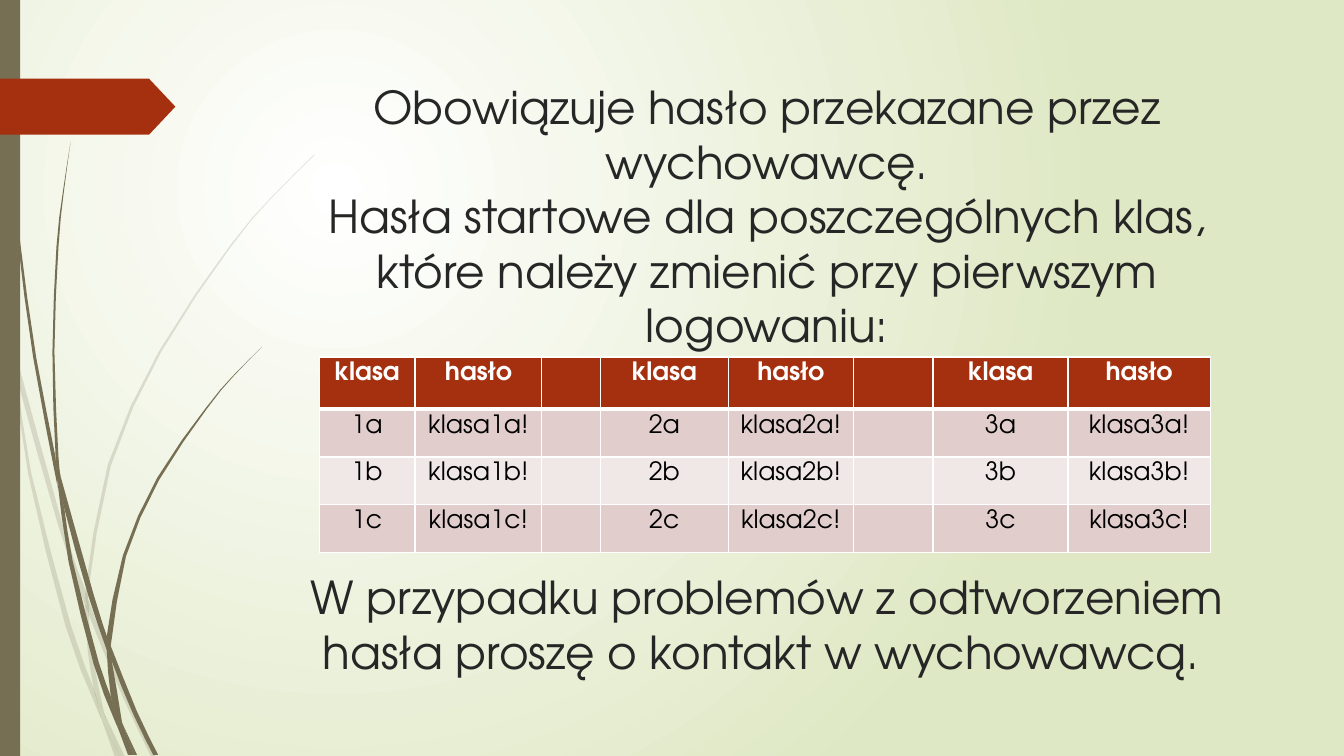
from lxml.etree import SubElement
from pptx import Presentation
from pptx.dml.color import RGBColor
from pptx.enum.shapes import MSO_SHAPE
from pptx.enum.text import MSO_ANCHOR, PP_ALIGN
from pptx.oxml.ns import qn
from pptx.util import Pt

FONT = "TeX Gyre Adventor"
WHITE = RGBColor(0xFF, 0xFF, 0xFF)
BLACK = RGBColor(0x00, 0x00, 0x00)
INK = RGBColor(0x26, 0x26, 0x26)
LIME = RGBColor(0xDF, 0xE8, 0xC4)
OLIVE = RGBColor(0x76, 0x6F, 0x54)
RUST = RGBColor(0xA5, 0x30, 0x10)
ROSE = RGBColor(0xE1, 0xCD, 0xCC)
BLUSH = RGBColor(0xF0, 0xE8, 0xE7)

GRID = 0.72
LINE_HEIGHT = 38.9
COLUMN_WIDTHS = [68.4, 90.7, 41.8, 91.4, 89.3, 56.9, 96.5, 101.5]
ROW_HEIGHTS = [37.4, 34, 34, 34]
GRADES = "123"
LETTERS = "abc"

PALE_BLADES = [
    ([(0, 299), (10, 344), (11, 350)], [(0, 282), (9, 322), (11, 350)]),
    ([(14, 345), (17, 376), (58, 522), (84, 599)], [(14, 345), (62, 520), (85, 586)]),
    ([(88, 596), (88, 610), (123, 694), (150, 751)], [(92, 607), (127, 692), (155, 751)]),
    ([(105, 711), (119, 751)], [(105, 711), (124, 751)]),
    ([(11, 350), (28, 470), (65, 621), (92, 693), (101, 714)],
     [(11, 350), (17, 376), (31, 469), (70, 619), (93, 683), (99, 707), (101, 714)]),
    ([(84, 599), (87, 646), (93, 683), (96, 692), (105, 711)],
     [(84, 599), (88, 608), (91, 646), (103, 706), (105, 711)]),
    ([(312, 153), (268, 197), (228, 244), (158, 348), (107, 461), (85, 584), (88, 596)],
     [(312, 154), (268, 198), (229, 245), (160, 349), (110, 462), (88, 584), (88, 596)]),
    ([(101, 714), (114, 751)], [(101, 714), (119, 751)]),
    ([(85, 586), (84, 599), (88, 608)], [(85, 586), (88, 596), (88, 610)]),
    ([(93, 683), (99, 707), (101, 714), (119, 751)], [(93, 683), (96, 692), (105, 711), (119, 751)]),
]
DARK_BLADES = [
    ([(3, 0), (7, 110), (17, 233), (33, 355), (56, 477), (57, 481)],
     [(4, 0), (8, 109), (19, 232), (36, 355), (55, 453), (57, 481)]),
    ([(60, 472), (64, 505), (88, 592), (106, 645)], [(60, 472), (93, 590), (106, 631)]),
    ([(110, 641), (111, 656), (132, 708), (152, 749)], [(110, 641), (136, 706), (157, 749)]),
    ([(57, 477), (68, 557), (93, 659), (111, 708), (117, 722)],
     [(57, 477), (64, 505), (72, 556), (98, 657), (110, 691), (117, 722)]),
    ([(70, 141), (62, 193), (56, 245), (52, 349), (55, 449), (60, 472)],
     [(70, 141), (63, 193), (58, 245), (54, 349), (58, 453), (60, 472)]),
    ([(122, 719), (133, 749)], [(122, 719), (136, 749)]),
    ([(55, 449), (57, 477), (64, 505)], [(55, 449), (60, 472), (64, 505)]),
    ([(260, 344), (231, 373), (204, 405), (156, 474), (122, 551), (106, 631), (110, 641)],
     [(260, 344), (231, 374), (205, 406), (158, 476), (125, 552), (111, 633), (110, 641)]),
    ([(117, 722), (127, 749)], [(117, 722), (131, 749)]),
    ([(106, 645), (110, 691), (122, 719)], [(106, 645), (111, 656), (121, 716), (122, 719)]),
    ([(106, 631), (106, 645), (111, 656)], [(106, 631), (110, 641), (111, 656)]),
    ([(110, 691), (117, 722), (130, 749)], [(110, 691), (122, 719), (133, 749)]),
]


def smooth(points, steps=2):
    """Return a Catmull-Rom curve through the points."""
    padded = [points[0], *points, points[-1]]
    curve = [points[0]]
    for a, b, c, d in zip(padded, padded[1:], padded[2:], padded[3:]):
        for step in range(1, steps + 1):
            t = step / steps
            curve.append(tuple(
                q + t * (r - p) / 2 + t * t * (2 * p - 5 * q + 4 * r - s) / 2
                + t ** 3 * (3 * q - p - 3 * r + s) / 2
                for p, q, r, s in zip(a, b, c, d)))
    return curve


def paint(shape, color, opacity=100):
    """Give the shape a plain fill with no outline or shadow."""
    shape.shadow.inherit = False
    shape.line.fill.background()
    shape.fill.solid()
    shape.fill.fore_color.rgb = color
    if opacity < 100:
        tint = shape.element.xpath("./p:spPr/a:solidFill/a:srgbClr")[0]
        SubElement(tint, qn("a:alpha"), val=str(opacity * 1000))


def add_blade(page, left_edge, right_edge, opacity):
    """Draw one piece of grass between its two edges."""
    outline = smooth(left_edge) + smooth(right_edge)[::-1]
    corners = [(Pt(x * GRID), Pt(y * GRID)) for x, y in outline]
    builder = page.shapes.build_freeform(*corners[0])
    builder.add_line_segments(corners[1:], close=True)
    paint(builder.convert_to_shape(), OLIVE, opacity)


def add_block(page, kind, left, top, width, height, color):
    """Add a plain preset shape."""
    block = page.shapes.add_shape(kind, Pt(left), Pt(top), Pt(width), Pt(height))
    paint(block, color)
    return block


def write(para, text, *, size, color, bold=False, before=0):
    """Fill a paragraph with one centred span."""
    para.alignment = PP_ALIGN.CENTER
    para.space_before = Pt(before)
    span = para.add_run()
    span.text = text
    span.font.name = FONT
    span.font.size = Pt(size)
    span.font.bold = bold
    span.font.color.rgb = color


def add_message(page):
    """Add the instructions, leaving room for the table."""
    box = page.shapes.add_textbox(Pt(197), Pt(53.3), Pt(702), Pt(435))
    frame = box.text_frame
    frame.word_wrap = True
    frame.vertical_anchor = MSO_ANCHOR.TOP
    messages = [
        ("Obowiązuje hasło przekazane przez wychowawcę.", 0),
        ("Hasła startowe dla poszczególnych klas, które należy zmienić przy pierwszym logowaniu:", 0),
        ("W przypadku problemów z odtworzeniem hasła proszę o kontakt w wychowawcą. ", 4 * LINE_HEIGHT),
    ]
    for index, (text, before) in enumerate(messages):
        para = frame.add_paragraph() if index else frame.paragraphs[0]
        write(para, text, size=32.4, color=INK, before=before)


def set_borders(cell, top, bottom):
    """Draw white cell borders, with the top and bottom widths given."""
    properties = cell._tc.get_or_add_tcPr()
    sides = [("a:lnL", 1), ("a:lnR", 1), ("a:lnT", top), ("a:lnB", bottom)]
    for index, (side, width) in enumerate(sides):
        line = SubElement(properties, qn(side), w=str(Pt(width)))
        SubElement(SubElement(line, qn("a:solidFill")), qn("a:srgbClr"), val=str(WHITE))
        properties.insert(index, line)


def join(pairs):
    """Lay pairs side by side with an empty cell between them."""
    return [text for pair in pairs for text in (*pair, "")][:-1]


def add_password_table(page):
    """Add the table of starting passwords."""
    rows = [join([("klasa", "hasło")] * len(GRADES))]
    rows += [join([(grade + letter, f"klasa{grade}{letter}!") for grade in GRADES]) for letter in LETTERS]
    table = page.shapes.add_table(len(rows), len(COLUMN_WIDTHS), Pt(228), Pt(255),
                                  Pt(sum(COLUMN_WIDTHS)), Pt(sum(ROW_HEIGHTS))).table
    for column, width in zip(table.columns, COLUMN_WIDTHS):
        column.width = Pt(width)
    for row, height in zip(table.rows, ROW_HEIGHTS):
        row.height = Pt(height)
    for r, texts in enumerate(rows):
        is_header = r == 0
        for c, text in enumerate(texts):
            cell = table.cell(r, c)
            cell.margin_top = cell.margin_bottom = Pt(3.6)
            cell.margin_left = cell.margin_right = Pt(5)
            cell.fill.solid()
            cell.fill.fore_color.rgb = RUST if is_header else (BLUSH, ROSE)[r % 2]
            set_borders(cell, 3 if r == 1 else 1, 3 if is_header else 1)
            if text:
                write(cell.text_frame.paragraphs[0], text, size=18,
                      color=WHITE if is_header else BLACK, bold=is_header)


def set_background(page):
    """Fill the page with a round glow from white to lime."""
    fill = page.background.fill
    fill.gradient()
    for stop, color in zip(fill.gradient_stops, (WHITE, LIME)):
        stop.color.rgb = color
    gradient = page.element.xpath(".//p:bg//a:gradFill")[0]
    for line in gradient.findall(qn("a:lin")):
        gradient.remove(line)
    glow = SubElement(gradient, qn("a:path"))
    glow.set("path", "circle")
    SubElement(glow, qn("a:fillToRect"), l="50000", t="50000", r="100000", b="100000")


def main():
    """Build the slide and save the deck."""
    deck = Presentation()
    deck.slide_width, deck.slide_height = Pt(960), Pt(540)
    page = deck.slides.add_slide(deck.slide_layouts[6])
    set_background(page)
    for blades, opacity in ((PALE_BLADES, 20), (DARK_BLADES, 100)):
        for left_edge, right_edge in blades:
            add_blade(page, left_edge, right_edge, opacity)
    add_block(page, MSO_SHAPE.RECTANGLE, 0, 0, 14.4, 540, OLIVE)
    arrow = add_block(page, MSO_SHAPE.PENTAGON, 0, 56.2, 125.3, 40, RUST)
    arrow.adjustments[0] = 0.47
    add_message(page)
    add_password_table(page)
    deck.save("out.pptx")


if __name__ == "__main__":
    main()
